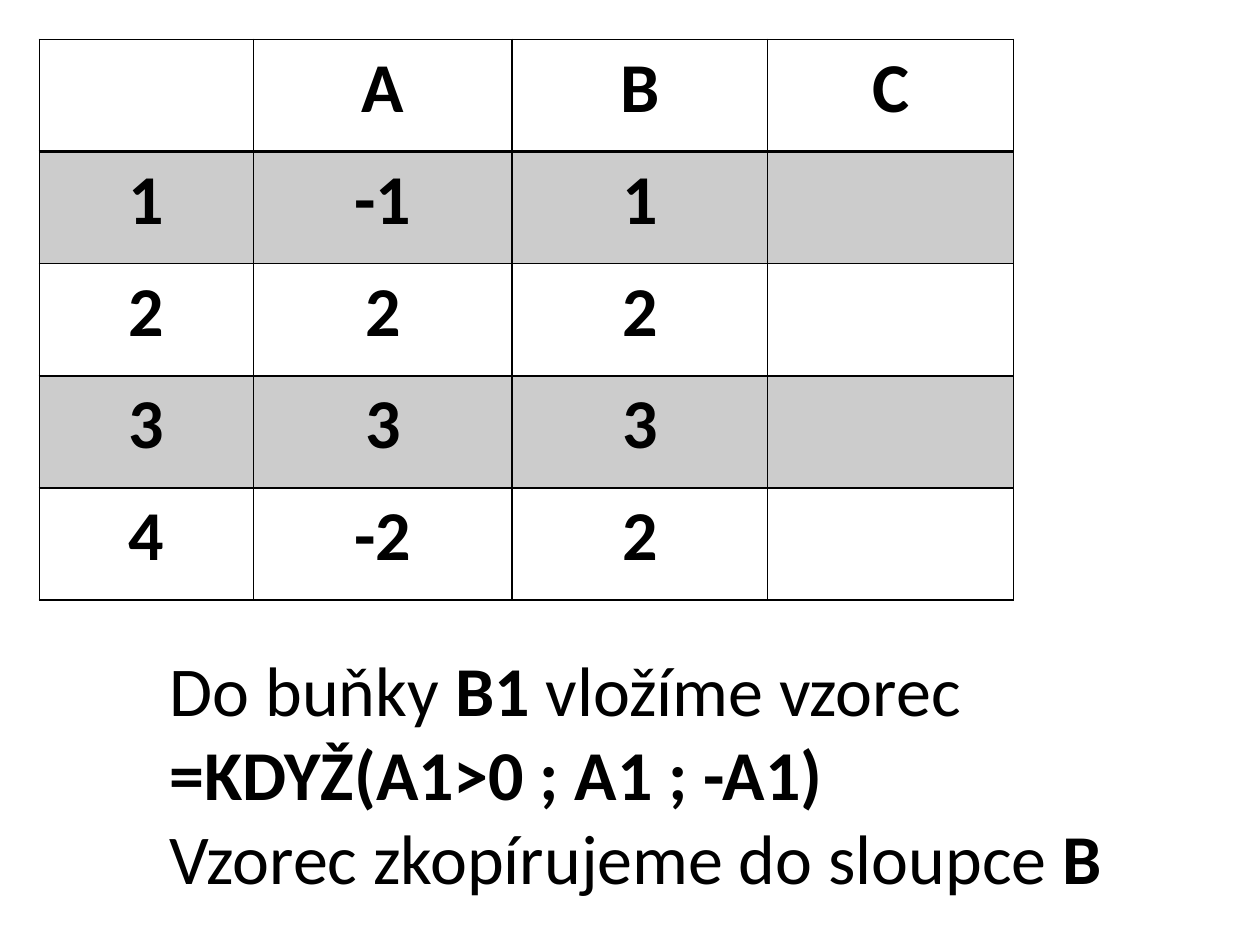
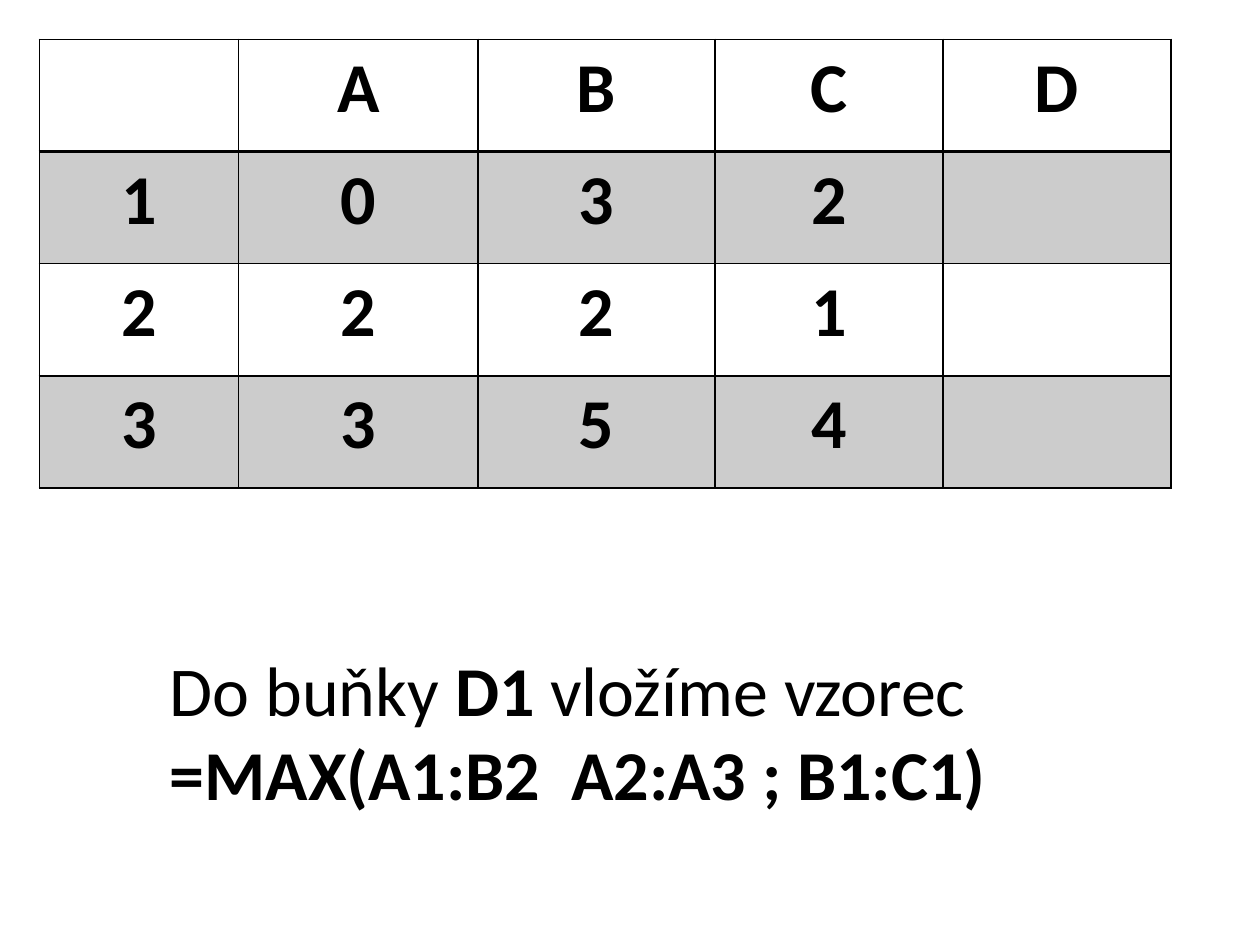
from lxml.etree import SubElement as Sub
from pptx import Presentation
from pptx.dml.color import RGBColor as RGB
from pptx.enum.text import MSO_AUTO_SIZE as Fit, PP_ALIGN as Align
from pptx.oxml.ns import qn
from pptx.util import Pt

# Shared look
FONT, SIZE = "Calibri", 40
INK, PAPER, BAND = "000000", "FFFFFF", "CCCCCC"
EDGE, ROW = 22.5, 64.1
NOTE = (90, 365.8, 568)

# Each slide: column widths, table rows, note lines (bold between asterisks)
SLIDES = [
    ([122.4, 147.6, 146.2, 140.4],
     [["", "A", "B", "C"],
      ["1", "-1", "1", ""],
      ["2", "2", "2", ""],
      ["3", "3", "3", ""],
      ["4", "-2", "2", ""]],
     152.6,
     ["Do buňky *B1 *vložíme vzorec *=KDYŽ(A1>0 ; A1 ; -A1)*",
      "Vzorec zkopírujeme do sloupce *B*"]),
    ([113.8, 136.8, 135.4, 130.3, 130.3],
     [["", "A", "B", "C", "D"],
      ["1", "0", "3", "2", ""],
      ["2", "2", "2", "1", ""],
      ["3", "3", "5", "4", ""]],
     104.4,
     ["Do buňky *D1 *vložíme vzorec *=MAX(A1:B2  A2:A3 ; B1:C1)*"]),
]


def color(code):
    return RGB.from_string(code)


def style(run, bold):
    font = run.font
    font.name, font.size, font.bold = FONT, Pt(SIZE), bold
    font.color.rgb = color(INK)


def border(cell, row):
    """Draw thin cell edges, with a thicker rule under the header."""
    props = cell._tc.get_or_add_tcPr()
    thick = {"T": row == 1, "B": row == 0}
    for side in "LRTB":
        width = 2 if thick.get(side) else 1
        line = Sub(props, qn(f"a:ln{side}"), w=str(Pt(width)))
        fill = Sub(line, qn("a:solidFill"))
        Sub(fill, qn("a:srgbClr"), val=INK)


def add_grid(slide, left, top, widths, rows):
    """Place a sheet of cells with every odd row shaded."""
    frame = slide.shapes.add_table(
        len(rows), len(widths), Pt(left), Pt(top),
        Pt(sum(widths)), Pt(ROW * len(rows)))
    table = frame.table
    for col, width in zip(table.columns, widths):
        col.width = Pt(width)
    for r, texts in enumerate(rows):
        table.rows[r].height = Pt(ROW)
        for c, text in enumerate(texts):
            cell = table.cell(r, c)
            border(cell, r)
            cell.fill.solid()
            cell.fill.fore_color.rgb = color(BAND if r % 2 else PAPER)
            cell.text = text
            para = cell.text_frame.paragraphs[0]
            para.alignment = Align.CENTER
            for run in para.runs:
                style(run, True)


def add_note(slide, left, top, width, height, lines):
    """Place the wrapped explanation with its bold parts."""
    box = slide.shapes.add_textbox(Pt(left), Pt(top), Pt(width), Pt(height))
    frame = box.text_frame
    frame.word_wrap = True
    frame.auto_size = Fit.SHAPE_TO_FIT_TEXT
    for i, line in enumerate(lines):
        para = frame.add_paragraph() if i else frame.paragraphs[0]
        for k, part in enumerate(line.split("*")):
            if part:
                run = para.add_run()
                run.text = part
                style(run, k % 2 == 1)


def main():
    deck = Presentation()
    deck.slide_width, deck.slide_height = Pt(720), Pt(540)
    for widths, rows, height, lines in SLIDES:
        slide = deck.slides.add_slide(deck.slide_layouts[6])
        add_grid(slide, EDGE, EDGE, widths, rows)
        add_note(slide, *NOTE, height, lines)
    deck.save("out.pptx")


if __name__ == "__main__":
    main()
